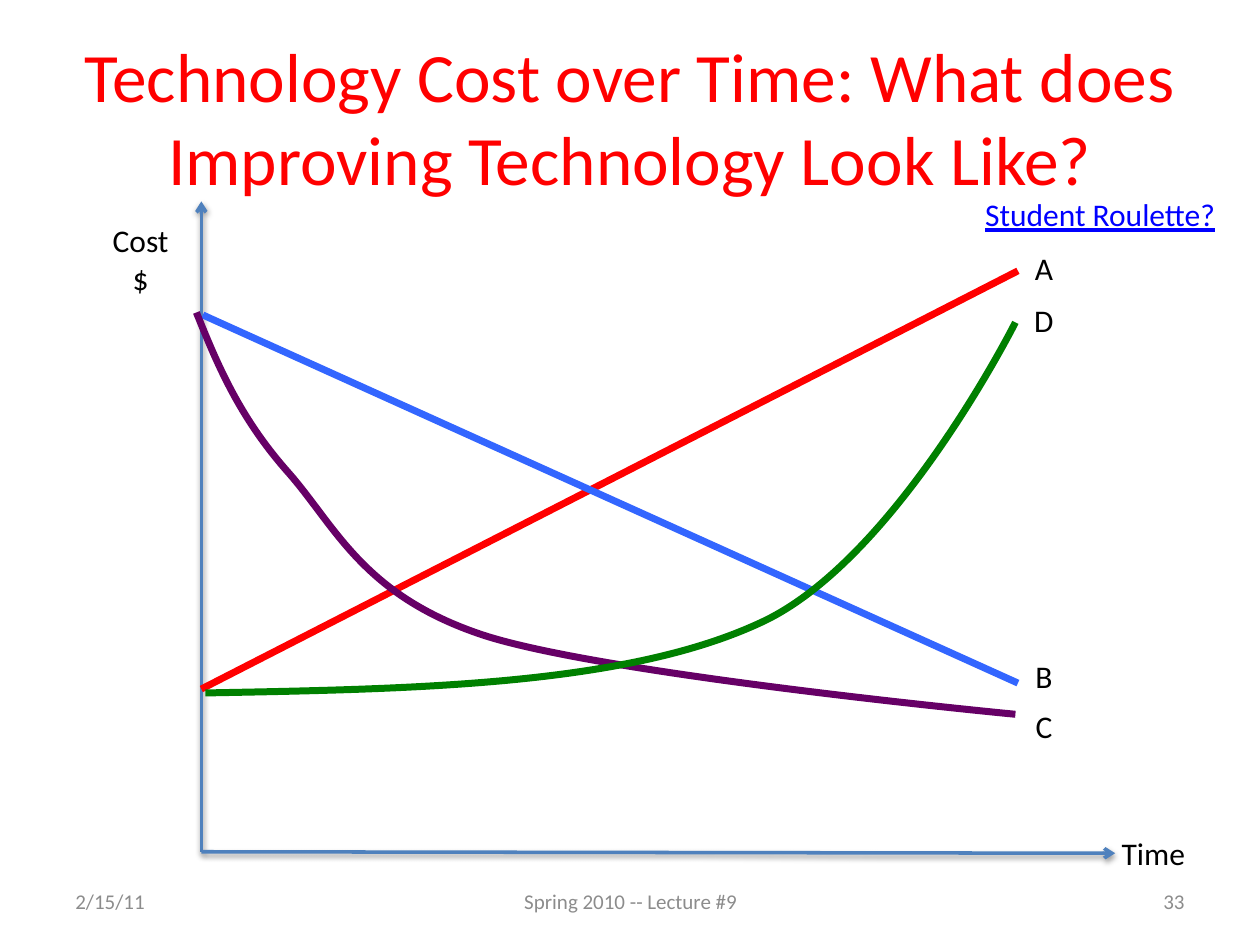
import pptx
import pptx.dml.color
import pptx.enum.shapes
import pptx.enum.text
import pptx.oxml
import pptx.oxml.ns
import pptx.util
from lxml import etree

Cm, Pt = pptx.util.Cm, pptx.util.Pt
RGB = pptx.dml.color.RGBColor
ALIGN = pptx.enum.text.PP_ALIGN
ANCHOR = pptx.enum.text.MSO_ANCHOR
qn = pptx.oxml.ns.qn

FONT = "Calibri"
RED = RGB(0xFF, 0x00, 0x00)
BLUE = RGB(0x33, 0x66, 0xFF)
PURPLE = RGB(0x66, 0x00, 0x66)
GREEN = RGB(0x00, 0x80, 0x00)
AXIS = RGB(0x4F, 0x81, 0xBD)
LINK = RGB(0x00, 0x00, 0xFF)
BLACK = RGB(0x00, 0x00, 0x00)
GREY = RGB(0x8C, 0x8C, 0x8C)

# All positions are in centimetres.
TITLE = "Technology Cost over Time: What does Improving Technology Look Like?"
FOOTERS = [
    ("2/15/11", 1.27, 5.92, ALIGN.LEFT),
    ("Spring 2010 -- Lecture #9", 8.69, 8.05, ALIGN.CENTER),
    ("33", 18.21, 5.92, ALIGN.RIGHT),
]
ORIGIN = (4.06, 17.17)
AXIS_ENDS = [(4.06, 4.06), (22.48, 17.2)]
AXIS_LABELS = [
    (["Cost", "$"], (2.01, 4.34, 1.65, 1.8)),
    (["Time"], (22.35, 16.69, 1.8, 1.02)),
]
# Two points make a straight line; more are a start and Bézier triples.
SERIES = [
    ("A", RED, 4.9, [(4.06, 13.89), (20.52, 5.46)]),
    ("B", BLUE, 13.13, [(4.09, 6.35), (20.52, 13.77)]),
    ("C", PURPLE, 14.12, [
        (3.96, 6.3),
        (4.39, 7.37), (4.83, 8.41), (5.79, 9.5),
        (6.76, 10.59), (7.29, 11.99), (9.73, 12.8),
        (12.19, 13.61), (20.47, 14.4), (20.47, 14.4)]),
    ("D", GREEN, 5.94, [
        (4.14, 13.97),
        (8.38, 13.89), (12.62, 13.82), (15.34, 12.55),
        (18.06, 11.3), (20.47, 6.5), (20.47, 6.5)]),
]
SERIES_LABEL_X, SERIES_LABEL_W, LINE_H = 20.6, 0.89, 1.02
LINK_TEXT, LINK_BOX = "Student Roulette?", (19.61, 3.81, 5.21, LINE_H)

SHADOW = (
    '<a:effectLst xmlns:a="http://schemas.openxmlformats.org/drawingml/2006/main">'
    '<a:outerShdw blurRad="40000" dist="20000" dir="5400000" rotWithShape="0">'
    '<a:srgbClr val="000000"><a:alpha val="38000"/></a:srgbClr>'
    '</a:outerShdw></a:effectLst>'
)


def add_run(p, text, size, color, align):
    p.alignment = align
    r = p.add_run()
    r.text = text
    r.font.name, r.font.size = FONT, Pt(size)
    r.font.color.rgb = color
    return r


def add_text(shapes, lines, box, size=18, color=BLACK, align=ALIGN.CENTER, wrap=False):
    tf = shapes.add_textbox(*map(Cm, box)).text_frame
    tf.word_wrap = wrap
    for i, line in enumerate(lines):
        p = tf.add_paragraph() if i else tf.paragraphs[0]
        add_run(p, line, size, color, align)
    return tf


def add_line(shapes, start, end, color, width):
    line = shapes.add_connector(
        pptx.enum.shapes.MSO_CONNECTOR.STRAIGHT, *map(Cm, start + end))
    line.line.color.rgb, line.line.width = color, Pt(width)
    return line


def add_axis(shapes, end):
    axis = add_line(shapes, ORIGIN, end, AXIS, 2)
    ln = axis.line._get_or_add_ln()
    etree.SubElement(ln, qn("a:tailEnd"), type="arrow")
    axis._element.spPr.append(pptx.oxml.parse_xml(SHADOW))


def add_curve(shapes, points, color):
    """Draw the control polygon, then turn each three segments into a Bézier."""
    start, *rest = [(Cm(x), Cm(y)) for x, y in points]
    builder = shapes.build_freeform(*start)
    builder.add_line_segments(rest, close=False)
    sp = builder.convert_to_shape()
    sp.shadow.inherit = False
    sp.fill.background()
    sp.line.color.rgb, sp.line.width = color, Pt(4)
    segments = list(sp._element.iter(qn("a:lnTo")))
    for i in range(0, len(segments), 3):
        bezier = etree.Element(qn("a:cubicBezTo"))
        segments[i].addprevious(bezier)
        for seg in segments[i:i + 3]:
            bezier.append(seg[0])
            seg.getparent().remove(seg)


def main():
    prs = pptx.Presentation()
    prs.slide_width, prs.slide_height = Cm(25.4), Cm(19.05)
    s = prs.slides.add_slide(prs.slide_layouts[5])

    title = s.shapes.title
    title.left, title.top, title.width, title.height = map(Cm, (1.27, 0.76, 22.86, 3.18))
    tf = title.text_frame
    tf.word_wrap = True
    tf.auto_size = pptx.enum.text.MSO_AUTO_SIZE.NONE
    tf.vertical_anchor = ANCHOR.MIDDLE
    add_run(tf.paragraphs[0], TITLE, 39.6, RED, ALIGN.CENTER)

    for text, x, w, align in FOOTERS:
        tf = add_text(s.shapes, [text], (x, 17.65, w, LINE_H), 12, GREY, align, True)
        tf.vertical_anchor = ANCHOR.MIDDLE

    for end in AXIS_ENDS:
        add_axis(s.shapes, end)
    for lines, box in AXIS_LABELS:
        add_text(s.shapes, lines, box)

    for name, color, label_y, points in SERIES:
        shapes = s.shapes.add_group_shape().shapes
        if len(points) == 2:
            line = add_line(shapes, *points, color, 4)
            etree.SubElement(line._element.spPr, qn("a:effectLst"))
        else:
            add_curve(shapes, points, color)
        add_text(shapes, [name], (SERIES_LABEL_X, label_y, SERIES_LABEL_W, LINE_H))

    tf = add_text(s.shapes, [LINK_TEXT], LINK_BOX, color=LINK, align=ALIGN.LEFT)
    tf.paragraphs[0].runs[0].font.underline = True

    prs.save("out.pptx")


if __name__ == "__main__":
    main()
